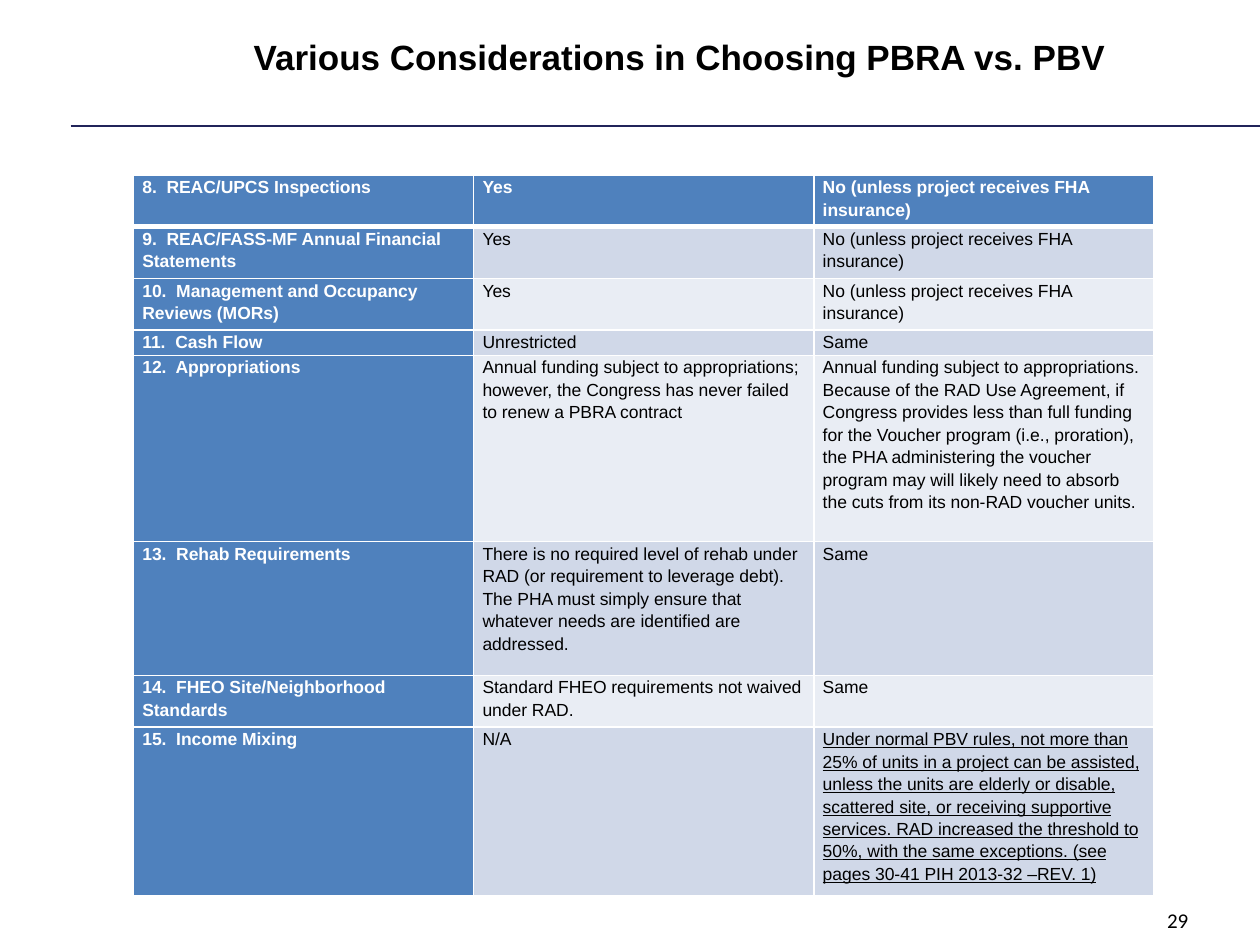
from typing import NamedTuple

from lxml import etree
from pptx import Presentation
from pptx.dml.color import RGBColor
from pptx.enum import shapes, text
from pptx.oxml import ns
from pptx.util import Inches, Pt

COLORS = {
    "black": "000000",
    "white": "FFFFFF",
    "rule": "21245A",
    "header": "4F81BD",
    "odd": "D0D8E8",
    "even": "E9EDF4",
}


class Consideration(NamedTuple):
    topic: str
    pbra: str
    pbv: str
    height: float
    underline_pbv: bool = False


FHA_ONLY = "No (unless project receives FHA insurance)"
CONSIDERATIONS = [
    Consideration("8.  REAC/UPCS Inspections", "Yes", FHA_ONLY, 0.41),
    Consideration("9.  REAC/FASS-MF Annual Financial Statements", "Yes", FHA_ONLY, 0.41),
    Consideration("10.  Management and Occupancy Reviews (MORs)", "Yes", FHA_ONLY, 0.41),
    Consideration("11.  Cash Flow", "Unrestricted", "Same", 0.2),
    Consideration(
        "12.  Appropriations",
        "Annual funding subject to appropriations; however, the Congress has "
        "never failed to renew a PBRA contract",
        "Annual funding subject to appropriations. Because of the RAD Use "
        "Agreement, if Congress provides less than full funding for the Voucher "
        "program (i.e., proration), the PHA administering the voucher program may "
        "will likely need to absorb the cuts from its non-RAD voucher units.",
        1.48,
    ),
    Consideration(
        "13.  Rehab Requirements",
        "There is no required level of rehab under RAD (or requirement to "
        "leverage debt). The PHA must simply ensure that whatever needs are "
        "identified are addressed.",
        "Same",
        1.06,
    ),
    Consideration(
        "14.  FHEO Site/Neighborhood Standards",
        "Standard FHEO requirements not waived under RAD.",
        "Same",
        0.41,
    ),
    Consideration(
        "15.  Income Mixing",
        "N/A",
        "Under normal PBV rules, not more than 25% of units in a project can be "
        "assisted, unless the units are elderly or disable, scattered site, or "
        "receiving supportive services. RAD increased the threshold to 50%, with "
        "the same exceptions. (see pages 30-41 PIH 2013-32 –REV. 1)",
        1.27,
        underline_pbv=True,
    ),
]


def rgb(name: str) -> RGBColor:
    return RGBColor.from_string(COLORS[name])


def style_text(frame, size: float, color: str, bold: bool = False,
               font_name: str = "Arial", underline: bool = False) -> None:
    for run in frame.paragraphs[0].runs:
        font = run.font
        font.name, font.size, font.bold = font_name, Pt(size), bold
        font.color.rgb = rgb(color)
        if underline:
            font.underline = True


def set_borders(cell, bottom_width: float) -> None:
    """Put white borders before the fill, as the schema orders them."""
    properties = cell._tc.get_or_add_tcPr()
    widths = {"lnL": 1, "lnR": 1, "lnT": 1, "lnB": bottom_width}
    for index, (edge, width) in enumerate(widths.items()):
        line = etree.Element(ns.qn(f"a:{edge}"), w=str(Pt(width)))
        fill = etree.SubElement(line, ns.qn("a:solidFill"))
        etree.SubElement(fill, ns.qn("a:srgbClr"), val=COLORS["white"])
        properties.insert(index, line)


def fill_cell(cell, words: str, fill: str, bold: bool, underline: bool,
              bottom_width: float) -> None:
    cell.margin_left = cell.margin_right = Inches(0.07)
    cell.margin_top = cell.margin_bottom = 0
    cell.fill.solid()
    cell.fill.fore_color.rgb = rgb(fill)
    set_borders(cell, bottom_width)
    cell.text_frame.text = words
    cell.text_frame.paragraphs[0].line_spacing = 1.15
    style_text(cell.text_frame, 10, "white" if bold else "black", bold,
               underline=underline)


def add_comparison(slide) -> None:
    table = slide.shapes.add_table(
        len(CONSIDERATIONS), 3, Inches(1.06), Inches(1.39), Inches(8.1),
        Inches(sum(item.height for item in CONSIDERATIONS))).table
    for column in table.columns:
        column.width = Inches(2.7)
    for r, item in enumerate(CONSIDERATIONS):
        table.rows[r].height = Inches(item.height)
        for c, words in enumerate((item.topic, item.pbra, item.pbv)):
            heading = r == 0 or c == 0
            band = "odd" if r % 2 else "even"
            fill_cell(table.cell(r, c), words, "header" if heading else band,
                      heading, item.underline_pbv and c == 2, 3 if r == 0 else 1)


def main() -> None:
    deck = Presentation()
    deck.slide_width, deck.slide_height = Inches(10), Inches(7.5)
    slide = deck.slides.add_slide(deck.slide_layouts[5])

    # Rule under the title
    rule = slide.shapes.add_connector(
        shapes.MSO_CONNECTOR.STRAIGHT, Inches(0.56), Inches(1), Inches(10), Inches(1))
    rule.line.color.rgb = rgb("rule")
    rule.line.width = Pt(0.75)
    etree.SubElement(rule._element.spPr, ns.qn("a:effectLst"))

    # Title
    title = slide.shapes.title
    title.left, title.top = Inches(0.98), Inches(0.21)
    title.width, title.height = Inches(8.83), Inches(0.47)
    title.text_frame.text = "Various Considerations in Choosing PBRA vs. PBV"
    title.text_frame.vertical_anchor = text.MSO_ANCHOR.MIDDLE
    title.text_frame.paragraphs[0].alignment = text.PP_ALIGN.CENTER
    style_text(title.text_frame, 20, "black", bold=True)

    # Page number
    page = slide.shapes.add_textbox(
        Inches(7.2), Inches(7.1), Inches(2.33), Inches(0.4)).text_frame
    page.word_wrap = True
    page.vertical_anchor = text.MSO_ANCHOR.MIDDLE
    page.text = "29"
    page.paragraphs[0].alignment = text.PP_ALIGN.RIGHT
    style_text(page, 12, "black", font_name="Calibri")

    # PBRA and PBV side by side
    add_comparison(slide)
    deck.save("out.pptx")


if __name__ == "__main__":
    main()
